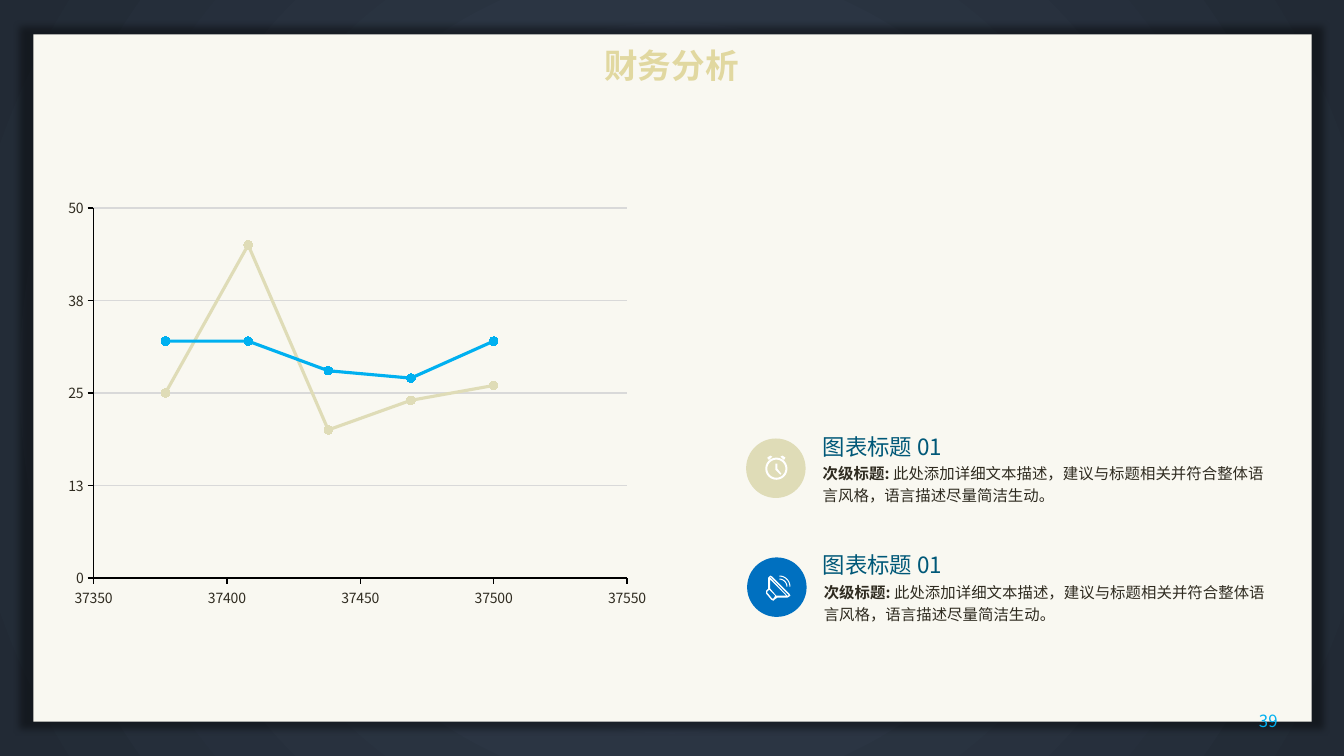
"""Build the financial analysis slide with its smooth scatter chart and two captions."""
from dataclasses import dataclass
from math import cos, radians, sin

from lxml import etree
from pptx import Presentation
from pptx.chart.data import XyChartData
from pptx.dml.color import RGBColor
from pptx.enum.chart import XL_CHART_TYPE, XL_MARKER_STYLE, XL_TICK_MARK
from pptx.enum.shapes import MSO_SHAPE
from pptx.enum.text import MSO_ANCHOR, MSO_AUTO_SIZE, PP_ALIGN
from pptx.oxml.ns import qn
from pptx.util import Inches, Pt

SCATTER = XL_CHART_TYPE.XY_SCATTER_SMOOTH
CIRCLE_MARKER = XL_MARKER_STYLE.CIRCLE
TICK_OUTSIDE, TICK_NONE = XL_TICK_MARK.OUTSIDE, XL_TICK_MARK.NONE
RECTANGLE, ROUNDED = MSO_SHAPE.RECTANGLE, MSO_SHAPE.ROUNDED_RECTANGLE
TOP, MIDDLE = MSO_ANCHOR.TOP, MSO_ANCHOR.MIDDLE
LEFT, CENTER, RIGHT = PP_ALIGN.LEFT, PP_ALIGN.CENTER, PP_ALIGN.RIGHT
NO_AUTOFIT = MSO_AUTO_SIZE.NONE


@dataclass(frozen=True)
class Theme:
    font: str = "Noto Sans CJK SC"
    backdrop_center: str = "333F50"
    backdrop_edge: str = "222A35"
    panel: str = "F9F8F1"
    shadow: str = "000000"
    title: str = "E1D8A0"
    heading: str = "005878"
    body: str = "2F2B20"
    sky: str = "00B0F0"
    blue: str = "0070C0"
    sand: str = "DFDCB7"
    white: str = "FFFFFF"
    axis: str = "000000"
    grid: str = "D9D9D9"
    title_size: int = 24
    heading_size: int = 16
    number_size: int = 12
    body_size: int = 11
    chart_size: int = 10


def apply(target, values):
    for name, value in values.items():
        setattr(target, name, value)


def add_element(parent, tag, **attributes):
    return etree.SubElement(parent, qn(tag), attributes)


def box(*lengths):
    return [Inches(length) for length in lengths]


def arc(center_x, center_y, radius, start=0, end=360):
    steps = 24
    angles = [radians(start + (end - start) * step / steps) for step in range(steps + 1)]
    return [(center_x + radius * cos(angle), center_y + radius * sin(angle)) for angle in angles]


class SlideBuilder:
    def __init__(self, slide, theme):
        self.slide, self.shapes, self.theme = slide, slide.shapes, theme

    def color(self, name):
        return RGBColor.from_string(getattr(self.theme, name))

    def paint(self, fill, name):
        fill.solid()
        fill.fore_color.rgb = self.color(name)

    def background(self):
        fill = self.slide.background.fill
        fill.gradient()
        for stop, name, position in zip(fill.gradient_stops, ("backdrop_center", "backdrop_edge"), (0, 1)):
            stop.position = position
            stop.color.rgb = self.color(name)
        linear = next(self.slide.element.iter(qn("a:lin")))
        gradient = linear.getparent()
        gradient.remove(linear)
        center = add_element(gradient, "a:path", path="circle")
        add_element(center, "a:fillToRect", l="50000", t="50000", r="50000", b="50000")

    def finish(self, shape, color):
        shape.shadow.inherit = False
        self.paint(shape.fill, color)
        shape.line.fill.background()
        return shape

    def shape(self, kind, bounds, color):
        return self.finish(self.shapes.add_shape(kind, *box(*bounds)), color)

    def panel(self, bounds):
        panel = self.shape(RECTANGLE, bounds, "panel")
        effects = panel.element.spPr.find(qn("a:effectLst"))
        glow = add_element(effects, "a:outerShdw", blurRad=str(Pt(5)), sx="102000", sy="102000",
                           algn="ctr", rotWithShape="0")
        shade = add_element(glow, "a:srgbClr", val=self.theme.shadow)
        add_element(shade, "a:alpha", val="40000")

    def icon(self, contours, color):
        first, *others = [[box(*point) for point in contour] for contour in contours]
        builder = self.shapes.build_freeform(*first[0])
        builder.add_line_segments(first[1:])
        for contour in others:
            builder.move_to(*contour[0])
            builder.add_line_segments(contour[1:])
        self.finish(builder.convert_to_shape(), color)

    def fill_text(self, shape, runs, size, color, align=LEFT, anchor=TOP, margins=(0, 0), spacing=1.0):
        frame = shape.text_frame
        horizontal, vertical = box(*margins)
        apply(frame, {"word_wrap": True, "auto_size": NO_AUTOFIT, "vertical_anchor": anchor,
                      "margin_left": horizontal, "margin_right": horizontal,
                      "margin_top": vertical, "margin_bottom": vertical})
        paragraph = frame.paragraphs[0]
        apply(paragraph, {"alignment": align, "line_spacing": spacing, "space_before": Pt(0)})
        for text, bold in runs:
            run = paragraph.add_run()
            run.text = text
            apply(run.font, {"name": self.theme.font, "size": Pt(size), "bold": bold})
            run.font.color.rgb = self.color(color)
            add_element(run.font._element, "a:ea", typeface=self.theme.font)

    def text(self, bounds, *arguments, **formats):
        self.fill_text(self.shapes.add_textbox(*box(*bounds)), *arguments, **formats)

    def title(self, bounds, text):
        title = self.shapes.title
        apply(title, dict(zip(("left", "top", "width", "height"), box(*bounds))))
        self.fill_text(title, [(text, True)], self.theme.title_size, "title",
                       align=CENTER, anchor=MIDDLE, margins=(0.1, 0.05))

    def axis(self, axis, formats, number_format):
        apply(axis, {"major_tick_mark": TICK_OUTSIDE, "minor_tick_mark": TICK_NONE, **formats})
        axis.format.line.width = Pt(1)
        axis.format.line.color.rgb = self.color("axis")
        apply(axis.tick_labels, {"number_format": number_format, "number_format_is_linked": False})

    def chart(self, bounds, dates, series_values, colors):
        data = XyChartData()
        for name, values in series_values.items():
            series = data.add_series(name)
            for point in zip(dates, values):
                series.add_data_point(*point)
        chart = self.shapes.add_chart(SCATTER, *box(*bounds), data).chart
        apply(chart, {"has_legend": False, "has_title": False})
        apply(chart.font, {"name": self.theme.font, "size": Pt(self.theme.chart_size)})
        chart.font.color.rgb = self.color("body")
        chart.plots[0].vary_by_categories = False
        self.axis(chart.category_axis, {"minimum_scale": 37350, "maximum_scale": 37550,
                                        "major_unit": 50, "has_major_gridlines": False}, "General")
        self.axis(chart.value_axis, {"minimum_scale": 0, "maximum_scale": 50,
                                     "major_unit": 12.5, "has_major_gridlines": True}, "0")
        grid = chart.value_axis.major_gridlines.format.line
        grid.width = Pt(1)
        grid.color.rgb = self.color("grid")
        for series, color in zip(chart.plots[0].series, colors):
            series.smooth = True
            series.format.line.width = Pt(2.25)
            series.format.line.color.rgb = self.color(color)
            apply(series.marker, {"style": CIRCLE_MARKER, "size": 6})
            self.paint(series.marker.format.fill, color)
            series.marker.format.line.color.rgb = self.color(color)
        plot_area = next(chart._chartSpace.iter(qn("c:plotArea")))
        for layout in plot_area.findall(qn("c:layout")):
            plot_area.remove(layout)
        layout = add_element(plot_area, "c:layout")
        plot_area.insert(0, layout)
        manual = add_element(layout, "c:manualLayout")
        for tag, value in (("layoutTarget", "inner"), ("xMode", "edge"), ("yMode", "edge"),
                           ("x", "0.066"), ("y", "0.035"), ("w", "0.902"), ("h", "0.894")):
            add_element(manual, f"c:{tag}", val=value)

    def caption(self, top, shift, color, icons):
        badge = self.shape(ROUNDED, (7.4 + shift, top + 0.16, 0.59, 0.59), color)
        badge.adjustments[0] = 0.5
        for contours in icons:
            self.icon(contours, "white")
        self.text((8.16 + shift, top + 0.38, 4.41, 0.65),
                  [("次级标题: ", True),
                   ("此处添加详细文本描述，建议与标题相关并符合整体语言风格，语言描述尽量简洁生动。", False)],
                  self.theme.body_size, "body", spacing=1.2)
        self.text((8.11, top, 4.45, 0.4), [("图表标题 01", False)],
                  self.theme.heading_size, "heading", margins=(0.05, 0.05), spacing=1.2)


def main():
    presentation = Presentation()
    apply(presentation, {"slide_width": Inches(13.33), "slide_height": Inches(7.5)})
    theme = Theme()
    builder = SlideBuilder(presentation.slides.add_slide(presentation.slide_layouts[5]), theme)
    builder.background()
    builder.panel((0.33, 0.34, 12.68, 6.82))
    title = builder.shapes.title.element
    title.getparent().append(title)
    builder.title((0.56, 0.4, 12.2, 0.5), "财务分析")
    builder.chart((0.54, 1.92, 5.87, 4.11), (37377, 37408, 37438, 37469, 37500),
                  {"Series 1": (32, 32, 28, 27, 32), "Series 2": (25, 45, 20, 24, 26)}, ("sky", "sand"))

    bell = [(7.61, 4.54), (7.64, 4.52), (7.66, 4.53), (7.65, 4.54), (7.63, 4.56), (7.62, 4.56)]
    hands = [(7.69, 4.6), (7.71, 4.6), (7.71, 4.65), (7.75, 4.7), (7.74, 4.71), (7.69, 4.66)]
    clock = [arc(7.7, 4.65, 0.11), arc(7.7, 4.65, 0.09), hands,
             bell, [(15.4 - x, y) for x, y in bell]]
    dish = [
        [(7.64, 5.71), (7.66, 5.72), (7.83, 5.89), (7.84, 5.91), (7.81, 5.93), (7.71, 5.93), (7.68, 5.95),
         (7.67, 5.96), (7.65, 5.95), (7.6, 5.89), (7.6, 5.86), (7.62, 5.84), (7.62, 5.73)],
        [(7.69, 5.91), (7.67, 5.94), (7.66, 5.94), (7.61, 5.88), (7.61, 5.87), (7.63, 5.85)],
        [(7.7, 5.91), (7.64, 5.84), (7.64, 5.75), (7.8, 5.91)],
        [(7.64, 5.72), (7.65, 5.73), (7.82, 5.9), (7.82, 5.91), (7.81, 5.91), (7.64, 5.73)]]
    waves = [[arc(7.73, 5.82, radius, -90, 0) + arc(7.73, 5.82, radius - 0.01, 0, -90)]
             for radius in (0.08, 0.11)]
    for row, (color, icons) in enumerate((("sand", [clock]), ("blue", [dish, *waves]))):
        builder.caption(4.19 + 1.18 * row, 0.01 * row, color, icons)
    builder.text((12.25, 6.95, 0.52, 0.4), [("39", False)], theme.number_size, "sky",
                 align=RIGHT, anchor=MIDDLE, margins=(0.1, 0.05))
    presentation.save("out.pptx")


if __name__ == "__main__":
    main()
